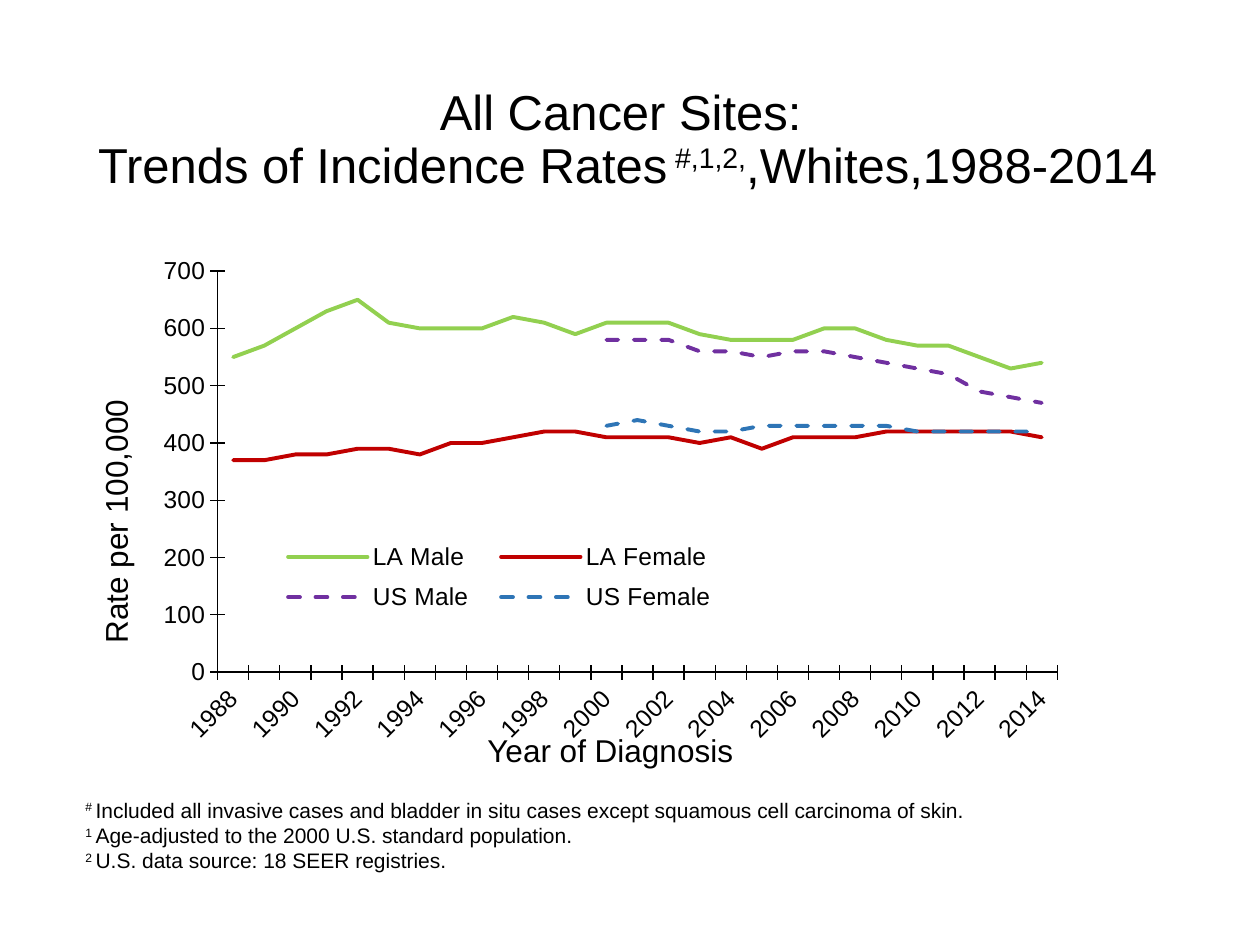
"""Build the slide on cancer incidence trends."""
from dataclasses import dataclass
from typing import NamedTuple

from lxml.etree import SubElement as Sub
from pptx import Presentation
from pptx.chart.data import CategoryChartData as Data
from pptx.dml.color import RGBColor as Rgb
from pptx.enum.chart import XL_CHART_TYPE as Kind, XL_LEGEND_POSITION as Side, XL_TICK_MARK as Tick
from pptx.enum.dml import MSO_LINE as Dash
from pptx.enum.text import MSO_ANCHOR as Anchor, MSO_AUTO_SIZE as Fit, PP_ALIGN as Align
from pptx.oxml.ns import qn
from pptx.util import Inches, Pt

WIDE, HIGH = Inches(10), Inches(7.5)


@dataclass(frozen=True)
class Theme:
    """Colours, fonts and type sizes."""
    ink: str = "000000"
    lime: str = "92D050"
    red: str = "C00000"
    plum: str = "7030A0"
    blue: str = "2E75B6"
    face: str = "Arial"
    base: str = "Calibri"
    head: float = 28
    name: float = 18
    tick: float = 14
    note: float = 12
    small: float = 10
    axis: float = 0.75
    trend: float = 2.25


class Box(NamedTuple):
    """Left, top, width and height as shares of the whole."""
    x: float
    y: float
    w: float
    h: float

    def place(self) -> tuple[int, ...]:
        """Give the box in slide units."""
        return tuple(int(s * f) for s, f in zip((WIDE, HIGH, WIDE, HIGH), self))


class Part(NamedTuple):
    """A stretch of text, raised or not."""
    text: str
    up: bool = False


class Trend(NamedTuple):
    """One line of the chart."""
    name: str
    hue: str
    start: int
    rates: list[int]
    dash: bool = False


class Label(NamedTuple):
    """A text box with its lines."""
    box: Box
    size: float
    lines: list[list[Part]]
    turn: int = 0


LOOK = Theme()
FIRST, LAST = 1988, 2014
TITLE = [Part("All Cancer Sites: \vTrends of Incidence Rates"), Part(" #,1,2,", True),
         Part(",Whites,1988-2014")]
TRENDS = [
    Trend("LA Male", LOOK.lime, 1988,
          [550, 570, 600, 630, 650, 610, 600, 600, 600, 620, 610, 590, 610, 610,
           610, 590, 580, 580, 580, 600, 600, 580, 570, 570, 550, 530, 540]),
    Trend("LA Female", LOOK.red, 1988,
          [370, 370, 380, 380, 390, 390, 380, 400, 400, 410, 420, 420, 410, 410,
           410, 400, 410, 390, 410, 410, 410, 420, 420, 420, 420, 420, 410]),
    Trend("US Male", LOOK.plum, 2000,
          [580, 580, 580, 560, 560, 550, 560, 560, 550, 540, 530, 520, 490, 480, 470], True),
    Trend("US Female", LOOK.blue, 2000,
          [430, 440, 430, 420, 420, 430, 430, 430, 430, 430, 420, 420, 420, 420, 420], True),
]
LABELS = [
    Label(Box(0.058, 0.837, 0.724, 0.095), LOOK.note, [
        [Part("# ", True), Part("Included all invasive cases and bladder in situ cases "
                                "except squamous cell carcinoma of skin.")],
        [Part("1 ", True), Part("Age-adjusted to the 2000 U.S. standard population.")],
        [Part("2 ", True), Part("U.S. data source: 18 SEER registries.")]]),
    Label(Box(0.377, 0.767, 0.217, 0.053), LOOK.name, [[Part("Year of Diagnosis")]]),
    Label(Box(-0.016, 0.524, 0.215, 0.053), LOOK.name, [[Part("Rate per 100,000")]], 270),
]


def style(font, size: float, face: str = LOOK.face) -> None:
    """Set size, face and ink of a font."""
    font.size, font.name = Pt(size), face
    font.color.rgb = Rgb.from_string(LOOK.ink)


def write(para, parts: list[Part], size: float) -> None:
    """Fill a paragraph with its parts."""
    para.text = parts[0].text
    for part in parts[1:]:
        para.add_run().text = part.text
    ups = [p.up for p in parts for _ in p.text.split("\v")]
    for run, up in zip(para.runs, ups):
        style(run.font, size)
        if up:
            run._r.get_or_add_rPr().set("baseline", "30000")


def draw_title(slide) -> None:
    """Place and fill the title."""
    shape = slide.shapes.title
    shape.left, shape.top, shape.width, shape.height = Box(0.058, 0.053, 0.88, 0.193).place()
    frame = shape.text_frame
    frame.auto_size, frame.vertical_anchor = Fit.NONE, Anchor.MIDDLE
    para = frame.paragraphs[0]
    write(para, TITLE, LOOK.head)
    para.alignment, para.line_spacing = Align.CENTER, 0.9


def draw_label(slide, label: Label) -> None:
    """Add a text box."""
    shape = slide.shapes.add_textbox(*label.box.place())
    shape.rotation = label.turn
    frame = shape.text_frame
    frame.word_wrap, frame.auto_size = False, Fit.SHAPE_TO_FIT_TEXT
    for row, parts in enumerate(label.lines):
        para = frame.add_paragraph() if row else frame.paragraphs[0]
        write(para, parts, label.size)


def lay_out(node, spot: int, box: Box, inner: bool = False) -> None:
    """Fix a chart part at shares of the chart."""
    for old in node.findall(qn("c:layout")):
        node.remove(old)
    lay = Sub(node, qn("c:layout"))
    node.insert(spot, lay)
    hand = Sub(lay, qn("c:manualLayout"))
    pairs = [("layoutTarget", "inner")] if inner else []
    pairs += [("xMode", "edge"), ("yMode", "edge"), *zip("xywh", map(str, box))]
    for tag, val in pairs:
        Sub(hand, qn(f"c:{tag}")).set("val", val)


def draw_line(line, hue: str, width: float) -> None:
    """Set colour and width of a line."""
    line.color.rgb, line.width = Rgb.from_string(hue), Pt(width)


def draw_chart(slide) -> None:
    """Add the chart of trends."""
    data = Data(number_format="0")
    data.categories = [str(year) for year in range(FIRST, LAST + 1)]
    for trend in TRENDS:
        data.add_series(trend.name, [None] * (trend.start - FIRST) + trend.rates)
    box = Box(0.04, 0.243, 0.891, 0.579)
    chart = slide.shapes.add_chart(Kind.LINE, *box.place(), data).chart
    chart.has_title = False
    style(chart.font, LOOK.small, LOOK.base)
    chart.plots[0].vary_by_categories = False
    for trend, ser in zip(TRENDS, chart.plots[0].series):
        ser.smooth = False
        line = ser.format.line
        draw_line(line, trend.hue, LOOK.trend)
        if trend.dash:
            line.dash_style = Dash.DASH
        ser._element.xpath("c:spPr/a:ln")[0].set("cap", "rnd")
    years, rates = chart.category_axis, chart.value_axis
    for axis in (years, rates):
        axis.has_major_gridlines = False
        axis.major_tick_mark, axis.minor_tick_mark = Tick.CROSS, Tick.NONE
        style(axis.tick_labels.font, LOOK.tick)
        draw_line(axis.format.line, LOOK.ink, LOOK.axis)
    rates.minimum_scale, rates.maximum_scale, rates.major_unit = 0, 700, 100
    node = years._element
    node.xpath("c:txPr/a:bodyPr")[0].set("rot", "-2700000")
    skip = Sub(node, qn("c:tickLblSkip"))
    skip.set("val", "2")
    node.find(qn("c:noMultiLvlLbl")).addprevious(skip)
    chart.has_legend = True
    legend = chart.legend
    legend.position, legend.include_in_layout = Side.BOTTOM, False
    style(legend.font, LOOK.tick)
    lay_out(legend._element, 1, Box(0.19, 0.55, 0.42, 0.17))
    lay_out(chart._chartSpace.chart.plotArea, 0, Box(0.149, 0.076, 0.748, 0.733), True)


def main() -> None:
    """Build and save the slide."""
    deck = Presentation()
    deck.slide_width, deck.slide_height = WIDE, HIGH
    slide = deck.slides.add_slide(deck.slide_layouts[5])
    draw_title(slide)
    draw_chart(slide)
    for label in LABELS:
        draw_label(slide, label)
    deck.save("out.pptx")


if __name__ == "__main__":
    main()
